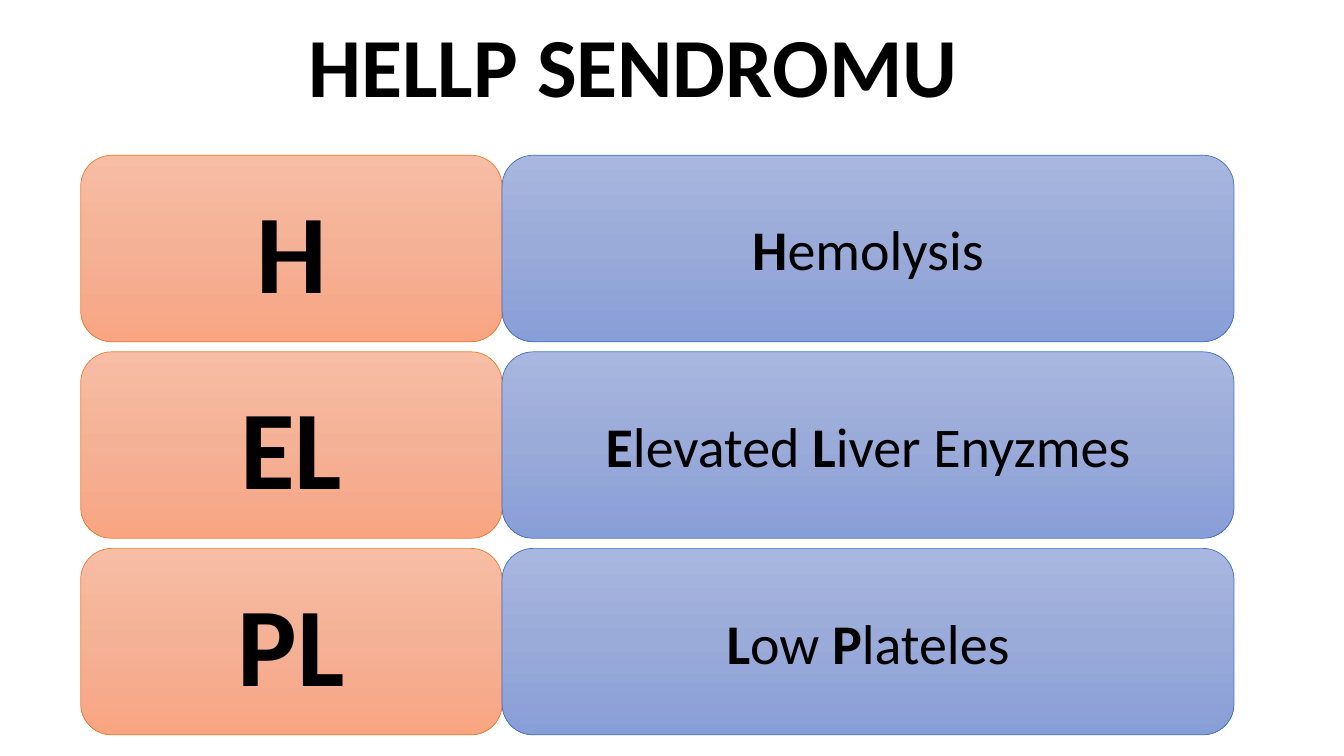
from copy import deepcopy

from pptx import Presentation
from pptx.dml.color import RGBColor
from pptx.enum import shapes, text
from pptx.oxml import ns
from pptx.util import Inches, Pt

FONT = "Calibri"
COLORS = {
    "text": "000000",
    "orange_line": "ED7D31",
    "orange_top": "F7BDA5",
    "orange_middle": "F5B196",
    "orange_bottom": "F8A582",
    "blue_line": "4472C4",
    "blue_top": "A8B7DF",
    "blue_middle": "9AABD9",
    "blue_bottom": "889ED7",
}

# Letters, then the meaning as (wording, bold) runs
ROWS = [
    ("H", [("H", True), ("emolysis", False)]),
    ("EL", [("E", True), ("levated", False), (" L", True), ("iver Enyzmes", False)]),
    ("PL", [("L", True), ("ow ", False), ("P", True), ("lateles", False)]),
]
FIRST_TOP, ROW_PITCH, ROW_HEIGHT = 1.54, 1.95, 1.85
LETTERS_LEFT, LETTERS_WIDTH = 0.8, 4.18
MEANING_LEFT, MEANING_WIDTH = LETTERS_LEFT + LETTERS_WIDTH, 7.26


def color(name):
    return RGBColor.from_string(COLORS[name])


def set_font(paragraph, size):
    paragraph.font.name = FONT
    paragraph.font.size = Pt(size)
    paragraph.font.color.rgb = color("text")


def fill_gradient(shape, hue):
    """Fill from top to bottom with three stops of one hue."""
    shape.fill.gradient()
    shape.fill.gradient_angle = 270
    stop_list = shape.element.spPr.find(ns.qn("a:gradFill")).find(ns.qn("a:gsLst"))
    stop_list.insert(1, deepcopy(stop_list[0]))
    parts = ("top", "middle", "bottom")
    for index, (stop, part) in enumerate(zip(shape.fill.gradient_stops, parts)):
        stop.color.rgb = color(f"{hue}_{part}")
        stop.position = index / 2


def add_title(slide, wording):
    title = slide.shapes.title
    title.left, title.top = Inches(2.96), Inches(0.08)
    title.width, title.height = Inches(8.53), Inches(1.11)
    frame = title.text_frame
    frame.text = wording
    frame.vertical_anchor = text.MSO_ANCHOR.TOP
    frame.auto_size = text.MSO_AUTO_SIZE.SHAPE_TO_FIT_TEXT
    paragraph = frame.paragraphs[0]
    paragraph.alignment = text.PP_ALIGN.LEFT
    set_font(paragraph, 60)
    paragraph.font.bold = True


def add_card(slide, left, top, width, hue, runs, size):
    card = slide.shapes.add_shape(
        shapes.MSO_SHAPE.ROUNDED_RECTANGLE,
        Inches(left), Inches(top), Inches(width), Inches(ROW_HEIGHT))
    card.shadow.inherit = False
    fill_gradient(card, hue)
    card.line.color.rgb = color(f"{hue}_line")
    card.line.width = Pt(0.5)
    card.text_frame.word_wrap = True
    card.text_frame.vertical_anchor = text.MSO_ANCHOR.MIDDLE
    paragraph = card.text_frame.paragraphs[0]
    paragraph.alignment = text.PP_ALIGN.CENTER
    set_font(paragraph, size)
    for wording, bold in runs:
        run = paragraph.add_run()
        run.text = wording
        run.font.bold = bold


def main():
    prs = Presentation()
    prs.slide_width, prs.slide_height = Inches(13.33), Inches(7.5)
    slide = prs.slides.add_slide(prs.slide_layouts.get_by_name("Title Only"))

    add_title(slide, "HELLP SENDROMU")

    # One row per part of the acronym
    for index, (letters, meaning) in enumerate(ROWS):
        top = FIRST_TOP + index * ROW_PITCH
        add_card(slide, LETTERS_LEFT, top, LETTERS_WIDTH, "orange", [(letters, True)], 80)
        add_card(slide, MEANING_LEFT, top, MEANING_WIDTH, "blue", meaning, 40)

    prs.save("out.pptx")


if __name__ == "__main__":
    main()
